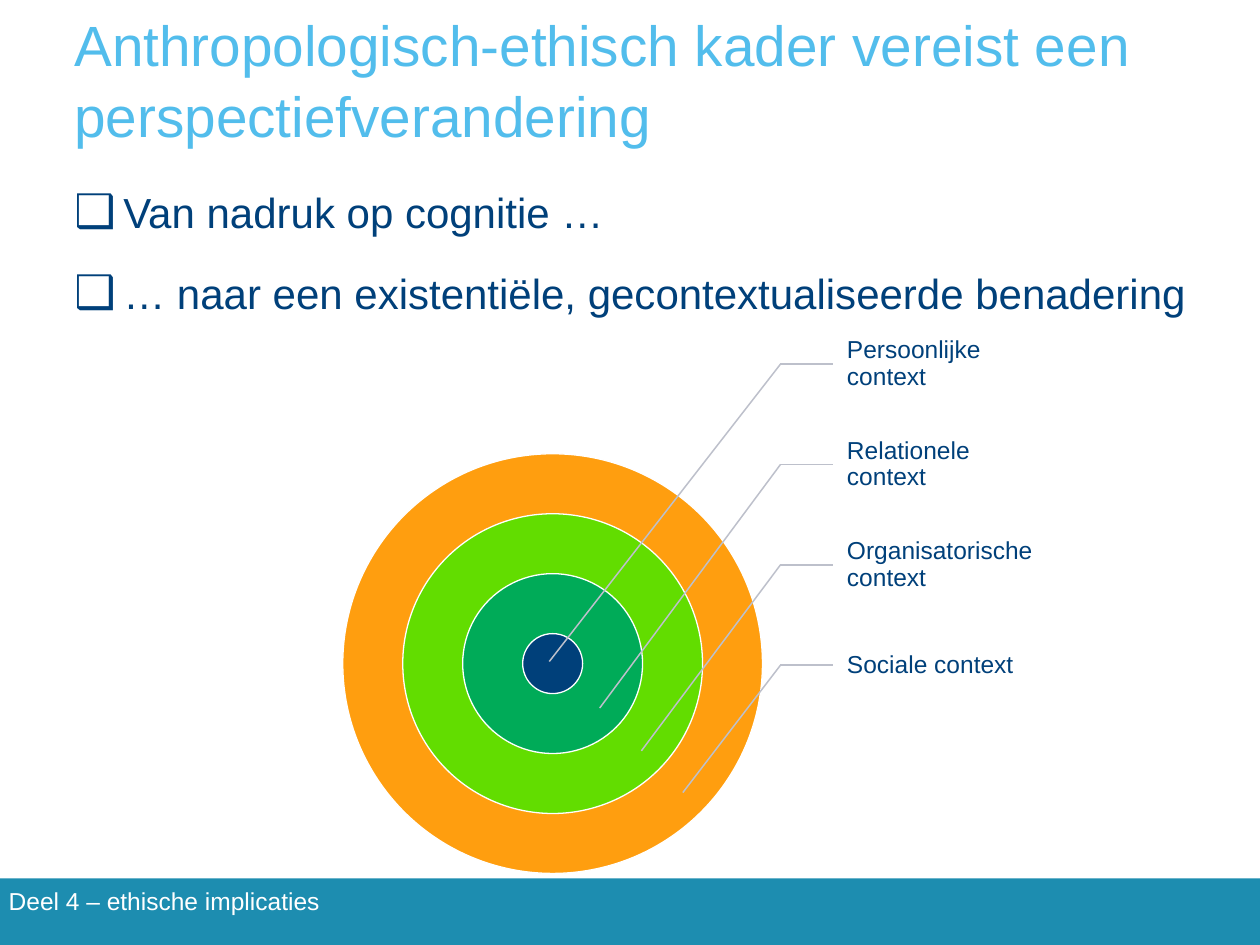
from dataclasses import dataclass
from lxml.etree import SubElement
from pptx import Presentation
from pptx.dml.color import RGBColor
from pptx.enum.shapes import MSO_CONNECTOR, MSO_SHAPE
from pptx.enum.text import MSO_ANCHOR, MSO_AUTO_SIZE, PP_ALIGN
from pptx.oxml.ns import qn
from pptx.util import Pt

TITLE = "Anthropologisch-ethisch kader vereist een perspectiefverandering"
BULLETS = [
    "Van nadruk op cognitie …",
    "… naar een existentiële, gecontextualiseerde benadering",
]
FOOTER = "Deel 4 – ethische implicaties"
CONTEXTS = [
    ("Persoonlijke context", (313.9, 378)),
    ("Relationele context", (342.7, 404.6)),
    ("Organisatorische context", (366.5, 429.1)),
    ("Sociale context", (390.2, 452.9)),
]
RING_COLORS = ["FF9E0F", "62DD00", "00AB58", "00407A"]


@dataclass(frozen=True)
class Theme:
    font: str = "Arial"
    title_color: str = "52BDEC"
    text_color: str = "00407A"
    band_color: str = "1D8DB0"
    leader_color: str = "BDC0CB"
    white: str = "FFFFFF"
    title_size: float = 32.4
    body_size: float = 24
    label_size: float = 14


theme = Theme()
SLIDE_WIDTH, SLIDE_HEIGHT = 720, 540
BAND_TOP = 502
TEXT_LEFT, TEXT_WIDTH = 42.5, 656
CENTER_X, CENTER_Y = 315.8, 379.2
OUTER_DIAMETER = 239.8
ELBOW_X, LABEL_X, LABEL_WIDTH = 446, 476, 120
FIRST_LABEL_Y, LABEL_STEP = 208.1, 57.35


def color(value):
    return RGBColor.from_string(value)


def place(shape, left, top, width, height):
    shape.left, shape.top = Pt(left), Pt(top)
    shape.width, shape.height = Pt(width), Pt(height)


def set_frame(shape, anchor, margins):
    frame = shape.text_frame
    frame.word_wrap = True
    frame.auto_size = MSO_AUTO_SIZE.NONE
    frame.vertical_anchor = anchor
    (frame.margin_left, frame.margin_top,
     frame.margin_right, frame.margin_bottom) = map(Pt, margins)
    return frame


def write(paragraph, text, size, text_color):
    paragraph.alignment = PP_ALIGN.LEFT
    run = paragraph.add_run()
    run.text = text
    run.font.name = theme.font
    run.font.size = Pt(size)
    run.font.color.rgb = color(text_color)


def add_bullet(paragraph):
    properties = paragraph._p.get_or_add_pPr()
    properties.set("marL", str(Pt(28)))
    properties.set("indent", str(-Pt(28)))
    SubElement(properties, qn("a:buSzPct")).set("val", "110000")
    SubElement(properties, qn("a:buFont")).set("typeface", theme.font)
    SubElement(properties, qn("a:buChar")).set("char", "❑")


def add_filled(slide, kind, box, fill, line=None):
    shape = slide.shapes.add_shape(kind, *map(Pt, box))
    shape.shadow.inherit = False
    shape.fill.solid()
    shape.fill.fore_color.rgb = color(fill)
    if line:
        shape.line.color.rgb = color(line)
        shape.line.width = Pt(0.75)
    else:
        shape.line.fill.background()


def add_text(slide, box, text, text_color, anchor, margins, spacing=1.0):
    text_box = slide.shapes.add_textbox(*map(Pt, box))
    paragraph = set_frame(text_box, anchor, margins).paragraphs[0]
    paragraph.line_spacing = spacing
    write(paragraph, text, theme.label_size, text_color)


def add_leader(slide, start, end):
    connector = slide.shapes.add_connector(
        MSO_CONNECTOR.STRAIGHT, *map(Pt, (*start, *end)))
    connector.line.color.rgb = color(theme.leader_color)
    connector.line.width = Pt(0.85)
    SubElement(connector._element.spPr, qn("a:effectLst"))


def add_headings(slide):
    title = slide.shapes.title
    place(title, TEXT_LEFT, 14.4, TEXT_WIDTH, 70.6)
    paragraph = set_frame(title, MSO_ANCHOR.BOTTOM, (0, 0, 0, 0)).paragraphs[0]
    paragraph.line_spacing = 1.04
    write(paragraph, TITLE, theme.title_size, theme.title_color)

    body = slide.placeholders[1]
    place(body, TEXT_LEFT, 106.6, TEXT_WIDTH, 90)
    frame = set_frame(body, MSO_ANCHOR.TOP, (0, 0, 0, 0))
    for index, text in enumerate(BULLETS):
        paragraph = frame.add_paragraph() if index else frame.paragraphs[0]
        paragraph.space_before = Pt(17.3 if index else 0)
        add_bullet(paragraph)
        write(paragraph, text, theme.body_size, theme.text_color)


def add_rings(slide):
    count = len(RING_COLORS)
    for index, fill in enumerate(RING_COLORS):
        diameter = OUTER_DIAMETER * (1 - 2 * index / (2 * count - 1))
        box = (CENTER_X - diameter / 2, CENTER_Y - diameter / 2, diameter, diameter)
        add_filled(slide, MSO_SHAPE.OVAL, box, fill, theme.white)


def add_labels(slide):
    for index, (text, target) in enumerate(CONTEXTS):
        middle = FIRST_LABEL_Y + index * LABEL_STEP
        box = (LABEL_X, middle - LABEL_STEP / 2, LABEL_WIDTH, LABEL_STEP)
        add_text(slide, box, text, theme.text_color, MSO_ANCHOR.MIDDLE,
                 (8, 1.4, 1.4, 1.4), 0.9)
        add_leader(slide, (ELBOW_X, middle), (LABEL_X, middle))
        add_leader(slide, (ELBOW_X, middle), target)


def main():
    presentation = Presentation()
    presentation.slide_width = Pt(SLIDE_WIDTH)
    presentation.slide_height = Pt(SLIDE_HEIGHT)
    slide = presentation.slides.add_slide(presentation.slide_layouts[1])
    slide.background.fill.solid()
    slide.background.fill.fore_color.rgb = color(theme.white)
    add_filled(slide, MSO_SHAPE.RECTANGLE,
               (0, BAND_TOP, SLIDE_WIDTH, SLIDE_HEIGHT - BAND_TOP), theme.band_color)
    add_headings(slide)
    add_rings(slide)
    add_labels(slide)
    add_text(slide, (0, 502.8, 388, 24.2), FOOTER, theme.white,
             MSO_ANCHOR.TOP, (5, 3.6, 7.2, 3.6))
    presentation.save("out.pptx")


if __name__ == "__main__":
    main()
